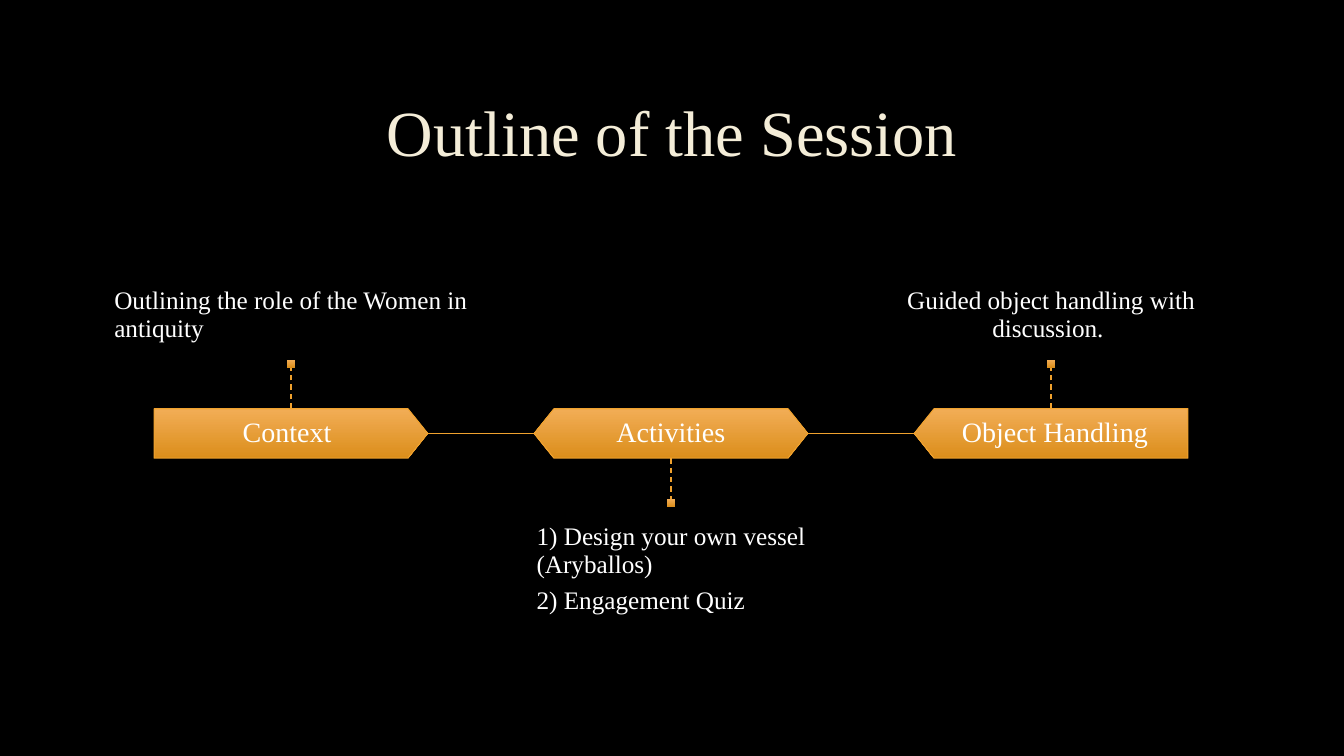
import lxml.etree
import pptx
import pptx.dml.color
import pptx.enum.dml
import pptx.enum.shapes
import pptx.enum.text
import pptx.oxml
import pptx.oxml.ns
import pptx.util

RGB = pptx.dml.color.RGBColor
BLACK = RGB(0x00, 0x00, 0x00)
WHITE = RGB(0xFF, 0xFF, 0xFF)
CREAM = RGB(0xF4, 0xED, 0xD8)
AMBER = RGB(0xF0, 0xA2, 0x2E)
AMBER_TOP = RGB(0xF2, 0xAD, 0x56)
AMBER_BOTTOM = RGB(0xDB, 0x8E, 0x1B)
FONT = "Times New Roman"

SHAPE = pptx.enum.shapes.MSO_SHAPE
ALIGN = pptx.enum.text.PP_ALIGN
ANCHOR = pptx.enum.text.MSO_ANCHOR
DASH = pptx.enum.dml.MSO_LINE.DASH

WIDTH, HEIGHT = pptx.util.Inches(13.33), pptx.util.Inches(7.5)
COLUMN = pptx.util.Inches(3.77)
ROW = pptx.util.Inches(0.49)
INSET = pptx.util.Inches(0.17)
TIMELINE_LEFT, TIMELINE_MIDDLE = pptx.util.Inches(1), pptx.util.Inches(4.3)
BAR_WIDTH = 0.72 * COLUMN
LABEL_WIDTH = 0.69 * COLUMN
STEM = 0.83 * ROW
MARKER = 0.16 * ROW
NOTE_HEIGHT = 2.65 * ROW

STAGES = [
    {"name": "Context", "outline": SHAPE.PENTAGON, "turn": 0, "shift": -0.01,
     "notes": ["Outlining the role of the Women in antiquity"],
     "side": -1, "align": ALIGN.LEFT},
    {"name": "Activities", "outline": SHAPE.HEXAGON, "turn": 0, "shift": 0,
     "notes": ["1) Design your own vessel (Aryballos)", "2) Engagement Quiz"],
     "side": 1, "align": ALIGN.LEFT},
    {"name": "Object Handling", "outline": SHAPE.PENTAGON, "turn": 180, "shift": 0.01,
     "notes": ["Guided object handling with discussion. "],
     "side": -1, "align": ALIGN.CENTER},
]


def apply(target, values):
    """Set each named attribute of the target."""
    for attribute, value in values.items():
        setattr(target, attribute, value)


def place(box):
    """Round a box to whole units."""
    return [int(length) for length in box]


def write(frame, lines, size, color, align, frame_format):
    """Fill a text frame with formatted paragraphs."""
    apply(frame, {"word_wrap": True, "auto_size": pptx.enum.text.MSO_AUTO_SIZE.NONE,
                  **frame_format})
    for index, line in enumerate(lines):
        paragraph = frame.paragraphs[0] if index == 0 else frame.add_paragraph()
        apply(paragraph, {"alignment": align, "line_spacing": 0.9,
                          "space_before": pptx.util.Pt(6.3 if index else 0)})
        run = paragraph.add_run()
        run.text = line
        apply(run.font, {"name": FONT, "size": pptx.util.Pt(size)})
        run.font.color.rgb = color


def add_title(slide, box):
    """Place the heading with its faint letter outline."""
    heading = slide.shapes.title
    apply(heading, dict(zip(("left", "top", "width", "height"), place(box))))
    write(heading.text_frame, ["Outline of the Session"], 46, CREAM, ALIGN.CENTER,
          {"vertical_anchor": ANCHOR.MIDDLE})
    letters = heading.text_frame.paragraphs[0].runs[0].font
    outline = pptx.oxml.parse_xml(
        f'<a:ln {pptx.oxml.ns.nsdecls("a")} w="9525"><a:solidFill><a:srgbClr val="404040">'
        '<a:alpha val="10000"/></a:srgbClr></a:solidFill></a:ln>')
    letters._element.insert(0, outline)


def add_amber(slide, outline, box, turn=0):
    """Add a preset shape with the amber gradient, light side up."""
    shape = slide.shapes.add_shape(outline, *place(box))
    shape.shadow.inherit = False
    shape.rotation = turn
    shape.fill.gradient()
    shape.fill.gradient_angle = 270 - turn
    for stop, color in zip(shape.fill.gradient_stops, (AMBER_TOP, AMBER_BOTTOM)):
        stop.color.rgb = color
    shape.line.fill.background()
    return shape


def add_rule(slide, ends, line_format):
    """Add a straight amber line."""
    rule = slide.shapes.add_connector(pptx.enum.shapes.MSO_CONNECTOR.STRAIGHT, *place(ends))
    rule.line.color.rgb = AMBER
    apply(rule.line, line_format)
    lxml.etree.SubElement(rule._element.spPr, pptx.oxml.ns.qn("a:effectLst"))


def add_text(slide, box, lines, size, align, frame_format):
    """Add a white text box whose text block is centred across it."""
    text = slide.shapes.add_textbox(*place(box))
    write(text.text_frame, lines, size, WHITE, align,
          {"margin_top": INSET, "margin_bottom": INSET, **frame_format})
    text.text_frame._txBody.bodyPr.set("anchorCtr", "1")


def add_stage(slide, stage, left, middle):
    """Place one stage bar with its stem, marker and note in a column."""
    center = left + COLUMN / 2
    bar = add_amber(slide, stage["outline"],
                    (center - BAR_WIDTH / 2, middle - ROW / 2, BAR_WIDTH, ROW), stage["turn"])
    bar.adjustments[0] = 0.4
    bar.line.color.rgb = AMBER
    bar.line.width = pptx.util.Pt(0.75)
    label_left = center + stage["shift"] * COLUMN - LABEL_WIDTH / 2
    add_text(slide, (label_left, middle - ROW / 2, LABEL_WIDTH, ROW), [stage["name"]], 20,
             ALIGN.CENTER, {"margin_left": INSET, "margin_right": INSET,
                            "vertical_anchor": ANCHOR.MIDDLE})

    side = stage["side"]
    edge = middle + side * ROW / 2
    tip = edge + side * STEM
    end = tip + side * MARKER
    add_rule(slide, (center, edge, center, tip),
             {"width": pptx.util.Pt(0.95), "dash_style": DASH})
    add_amber(slide, SHAPE.RECTANGLE,
              (center - MARKER / 2, min(tip, end), MARKER, MARKER))
    note_top = min(end, end + side * NOTE_HEIGHT)
    add_text(slide, (left, note_top, COLUMN, NOTE_HEIGHT), stage["notes"], 18, stage["align"],
             {"margin_left": 0, "margin_right": 0,
              "vertical_anchor": ANCHOR.BOTTOM if side < 0 else ANCHOR.TOP})


def add_timeline(slide, left, middle):
    """Place the stages in equal columns and join their bars."""
    for index, stage in enumerate(STAGES):
        column_left = left + index * COLUMN
        add_stage(slide, stage, column_left, middle)
        if index:
            gap = (COLUMN - BAR_WIDTH) / 2
            add_rule(slide, (column_left - gap, middle, column_left + gap, middle),
                     {"width": pptx.util.Pt(0.75)})


def main():
    """Build and save the session outline."""
    presentation = pptx.Presentation()
    apply(presentation, {"slide_width": WIDTH, "slide_height": HEIGHT})
    slide = presentation.slides.add_slide(presentation.slide_layouts[5])
    slide.background.fill.solid()
    slide.background.fill.fore_color.rgb = BLACK
    add_title(slide, (0.075 * WIDTH, 0.09 * HEIGHT, 0.85 * WIDTH, 0.18 * HEIGHT))
    add_timeline(slide, TIMELINE_LEFT, TIMELINE_MIDDLE)
    presentation.save("out.pptx")


if __name__ == "__main__":
    main()
